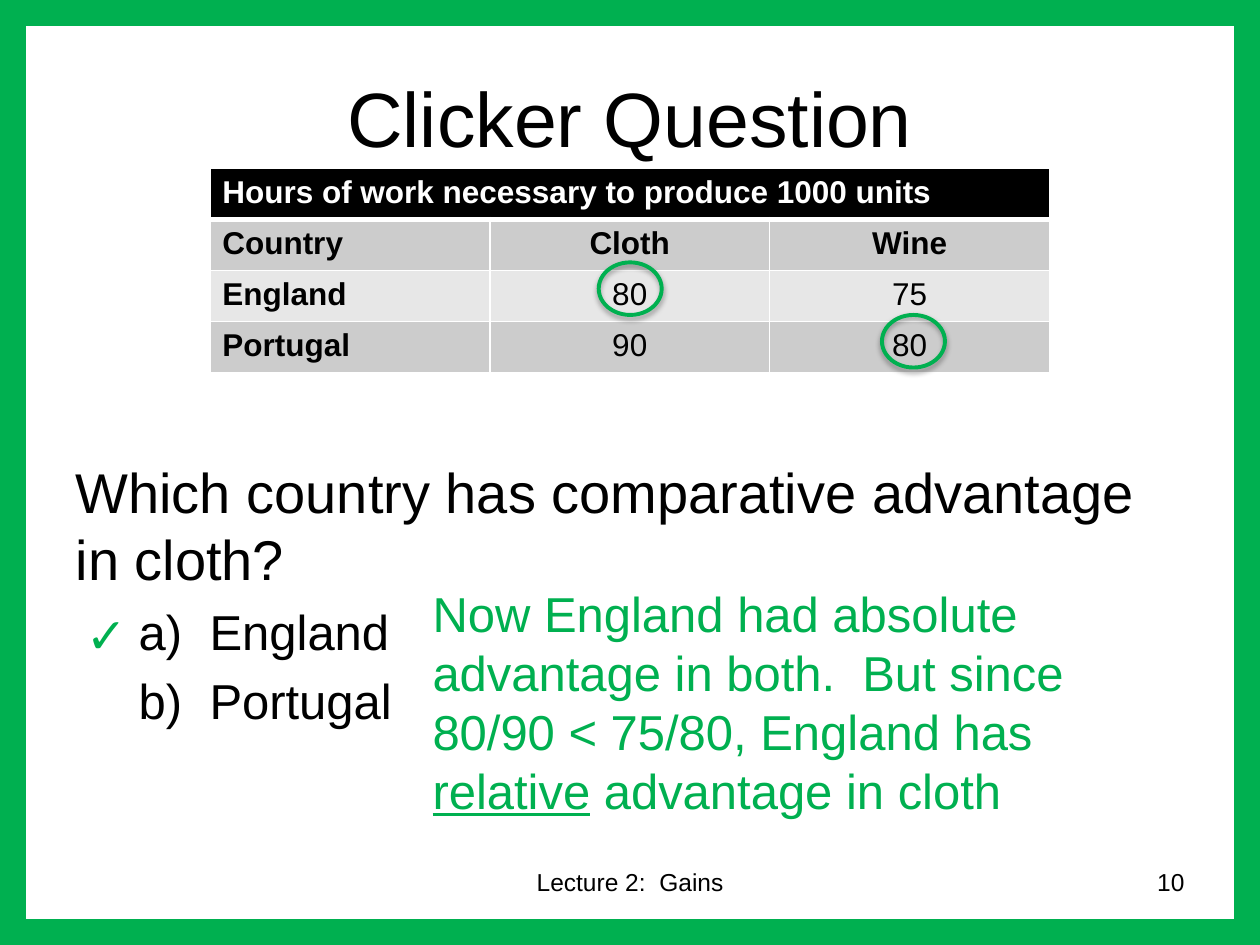
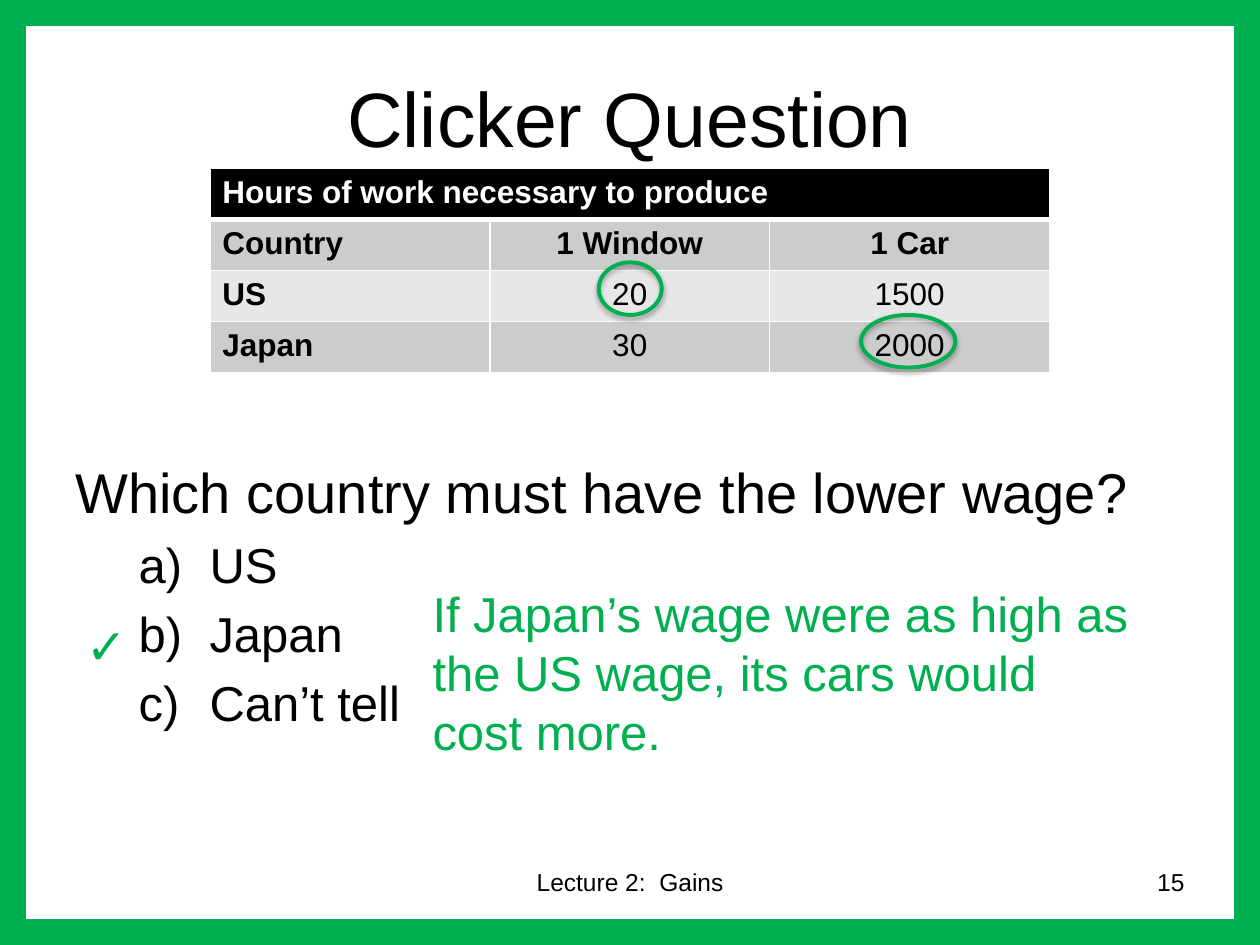
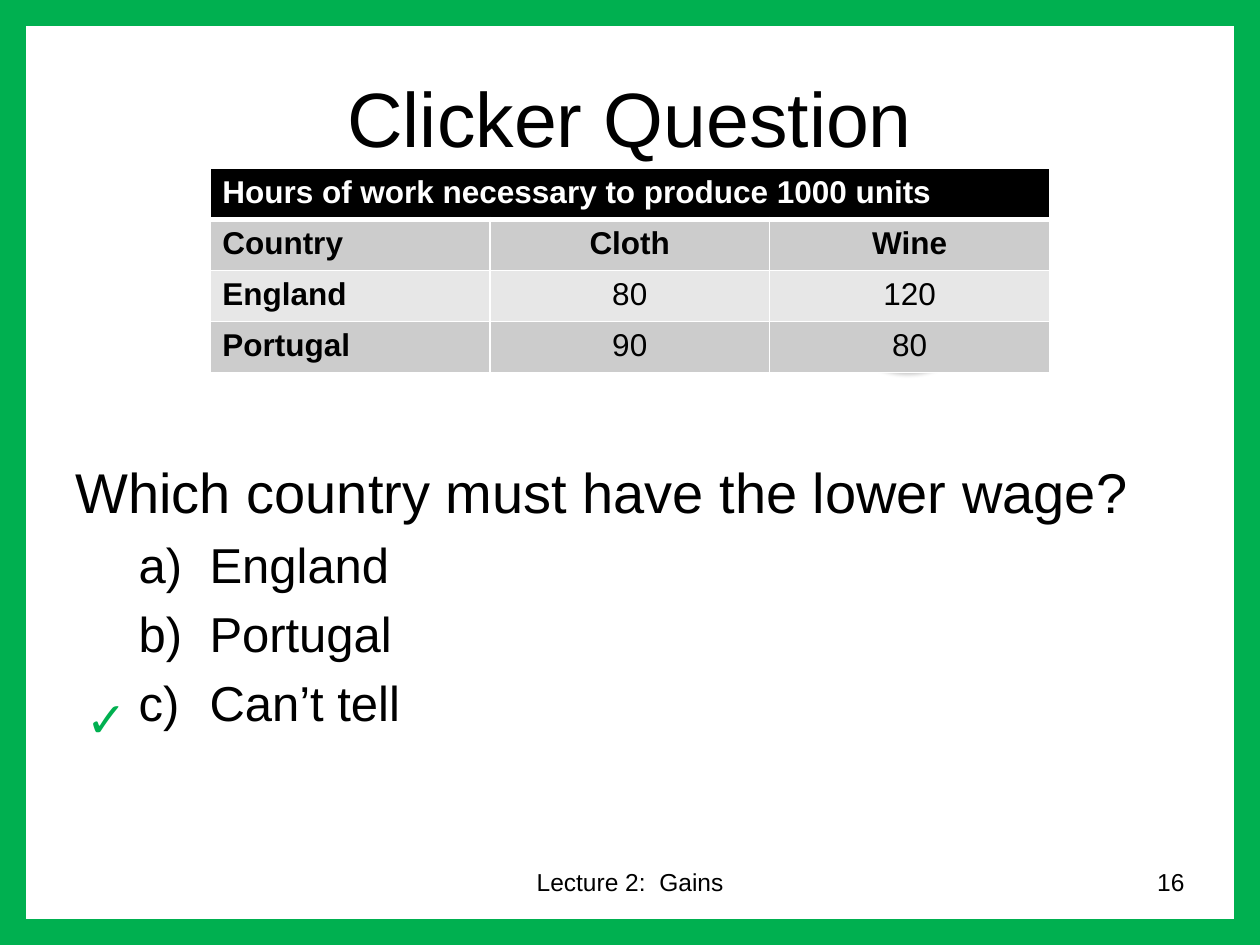
from lxml.etree import SubElement
from pptx import Presentation
from pptx.dml.color import RGBColor
from pptx.enum.shapes import MSO_SHAPE as SHAPE
from pptx.enum.text import MSO_ANCHOR as ANCHOR, MSO_AUTO_SIZE as AUTO_SIZE, PP_ALIGN as ALIGN
from pptx.oxml.ns import qn
from pptx.util import Cm, Pt

# Shared style
FONT = "Arial"
BLACK = RGBColor(0, 0, 0)
WHITE = RGBColor(0xFF, 0xFF, 0xFF)
GREEN = RGBColor(0x00, 0xB0, 0x50)
BAND_DARK = RGBColor(0xCC, 0xCC, 0xCC)
BAND_LIGHT = RGBColor(0xE7, 0xE7, 0xE7)
WIDTH, HEIGHT = Cm(25.4), Cm(19.05)
ROW_HEIGHT = 1.03
HEADER = "Hours of work necessary to produce"
FOOTER = "Lecture 2:  Gains"


def write(p, text, size=28, color=BLACK, bold=False, underline=False, align=None):
    """Add one formatted run to a paragraph."""
    r = p.add_run()
    r.text = text
    f = r.font
    f.name, f.size, f.bold, f.underline = FONT, Pt(size), bold, underline
    f.color.rgb = color
    if align is not None:
        p.alignment = align


def indent(p, left, first):
    pPr = p._p.get_or_add_pPr()
    pPr.set("marL", str(Cm(left)))
    pPr.set("indent", str(Cm(first)))
    return pPr


def border(cell, **widths):
    """Draw white cell borders; the keywords L, R, T and B give points."""
    tcPr = cell._tc.get_or_add_tcPr()
    for side, width in widths.items():
        ln = SubElement(tcPr, qn(f"a:ln{side}"), w=str(Pt(width)))
        fill = SubElement(ln, qn("a:solidFill"))
        SubElement(fill, qn("a:srgbClr"), val=str(WHITE))


class Deck:
    def __init__(self):
        self.prs = Presentation()
        self.prs.slide_width, self.prs.slide_height = WIDTH, HEIGHT
        self.s = None

    def new_slide(self, title, number):
        self.s = self.prs.slides.add_slide(self.prs.slide_layouts[1])
        self.frame()
        self.title(title)
        self.text(FOOTER, 8.68, 17.36, 8.05, 1.32, size=14, align=ALIGN.CENTER)
        self.text(str(number), 18.2, 17.36, 5.93, 1.32, size=14, align=ALIGN.RIGHT)

    def frame(self):
        sp = self.s.shapes.add_shape(SHAPE.RECTANGLE, 0, 0, WIDTH, HEIGHT)
        self.outline(sp, 30)

    def outline(self, sp, width):
        sp.fill.background()
        sp.line.color.rgb = GREEN
        sp.line.width = Pt(width)
        sp.shadow.inherit = False

    def place(self, sp, left, top, width, height):
        sp.left, sp.top, sp.width, sp.height = Cm(left), Cm(top), Cm(width), Cm(height)
        tf = sp.text_frame
        tf.word_wrap, tf.auto_size = True, AUTO_SIZE.NONE
        return tf

    def title(self, text):
        tf = self.place(self.s.shapes.title, 1.27, 0.76, 22.86, 3.18)
        tf.vertical_anchor = ANCHOR.MIDDLE
        write(tf.paragraphs[0], text, size=44, align=ALIGN.CENTER)

    def question(self, text, answers):
        tf = self.place(self.s.placeholders[1], 1.27, 9.1, 22.86, 6.98)
        p = tf.paragraphs[0]
        SubElement(indent(p, 0, 0), qn("a:buNone"))
        write(p, text, size=32)
        for answer in answers:
            p = tf.add_paragraph()
            p.level = 1
            SubElement(indent(p, 2.7, -1.43), qn("a:buAutoNum"), type="alphaLcParenR")
            write(p, answer)

    def text(self, text, left, top, width, height, underlined="", **fmt):
        sp = self.s.shapes.add_textbox(0, 0, 0, 0)
        p = self.place(sp, left, top, width, height).paragraphs[0]
        before, word, after = text.partition(underlined) if underlined else (text, "", "")
        write(p, before, **fmt)
        if word:
            write(p, word, underline=True, **fmt)
            write(p, after, **fmt)

    def check(self, top):
        self.text("✓", 1.48, top, 1.69, 1.45, color=GREEN)

    def explain(self, text, width, height, underlined=""):
        self.text(text, 8.47, 11.64, width, height, underlined, color=GREEN)

    def table(self, header, rows):
        shape = self.s.shapes.add_table(len(rows) + 1, 3, Cm(4.23), Cm(3.39),
                                        Cm(16.93), Cm(ROW_HEIGHT * (len(rows) + 1)))
        tbl = shape.table
        for i, values in enumerate([(header, "", "")] + rows):
            tbl.rows[i].height = Cm(ROW_HEIGHT)
            for j, value in enumerate(values):
                cell = tbl.cell(i, j)
                border(cell, L=1, R=1, T=1, B=1 if i else 3)
                cell.fill.solid()
                cell.fill.fore_color.rgb = (BLACK if i == 0 else
                                            BAND_DARK if i % 2 else BAND_LIGHT)
                if value:
                    write(cell.text_frame.paragraphs[0], value, size=18,
                          color=BLACK if i else WHITE, bold=i < 2 or j == 0,
                          align=ALIGN.CENTER if j else ALIGN.LEFT)
        tbl.cell(0, 0).merge(tbl.cell(0, 2))

    def circle(self, left, top, width=1.27):
        sp = self.s.shapes.add_shape(SHAPE.OVAL, Cm(left), Cm(top), Cm(width), Cm(1.06))
        self.outline(sp, 2.25)
        effects = sp._element.spPr.find(qn("a:effectLst"))
        shadow = SubElement(effects, qn("a:outerShdw"), blurRad=str(Pt(3.1)),
                            dist=str(Pt(1.8)), dir="5400000", rotWithShape="0")
        color = SubElement(shadow, qn("a:srgbClr"), val=str(BLACK))
        SubElement(color, qn("a:alpha"), val="35000")


def main():
    deck = Deck()

    # Comparative advantage
    deck.new_slide("Clicker Question", 10)
    deck.question("Which country has comparative advantage in cloth?",
                  ["England", "Portugal"])
    deck.check(12.07)
    deck.table(f"{HEADER} 1000 units", [("Country", "Cloth", "Wine"),
                                        ("England", "80", "75"),
                                        ("Portugal", "90", "80")])
    deck.explain("Now England had absolute advantage in both.  But since "
                 "80/90 < 75/80, England has relative advantage in cloth",
                 13.97, 5.05, underlined="relative")
    deck.circle(12.07, 5.29)
    deck.circle(17.78, 6.35)

    # Lower wage, one country better at both goods
    deck.new_slide("Clicker Question", 15)
    deck.question("Which country must have the lower wage?",
                  ["US", "Japan", "Can’t tell"])
    deck.check(12.28)
    deck.table(HEADER, [("Country", "1 Window", "1 Car"),
                        ("US", "20", "1500"),
                        ("Japan", "30", "2000")])
    deck.explain("If Japan’s wage were as high as the US wage, its cars would cost more.",
                 14.6, 3.84)
    deck.circle(12.07, 5.29)
    deck.circle(17.36, 6.35, width=1.9)

    # Lower wage, each country better at one good; the circle's shadow
    # shows below the table
    deck.new_slide("Clicker Question", 16)
    deck.question("Which country must have the lower wage?",
                  ["England", "Portugal", "Can’t tell"])
    deck.check(13.76)
    deck.circle(17.36, 6.35, width=1.9)
    deck.table(f"{HEADER} 1000 units", [("Country", "Cloth", "Wine"),
                                        ("England", "80", "120"),
                                        ("Portugal", "90", "80")])

    deck.prs.save("out.pptx")


if __name__ == "__main__":
    main()
